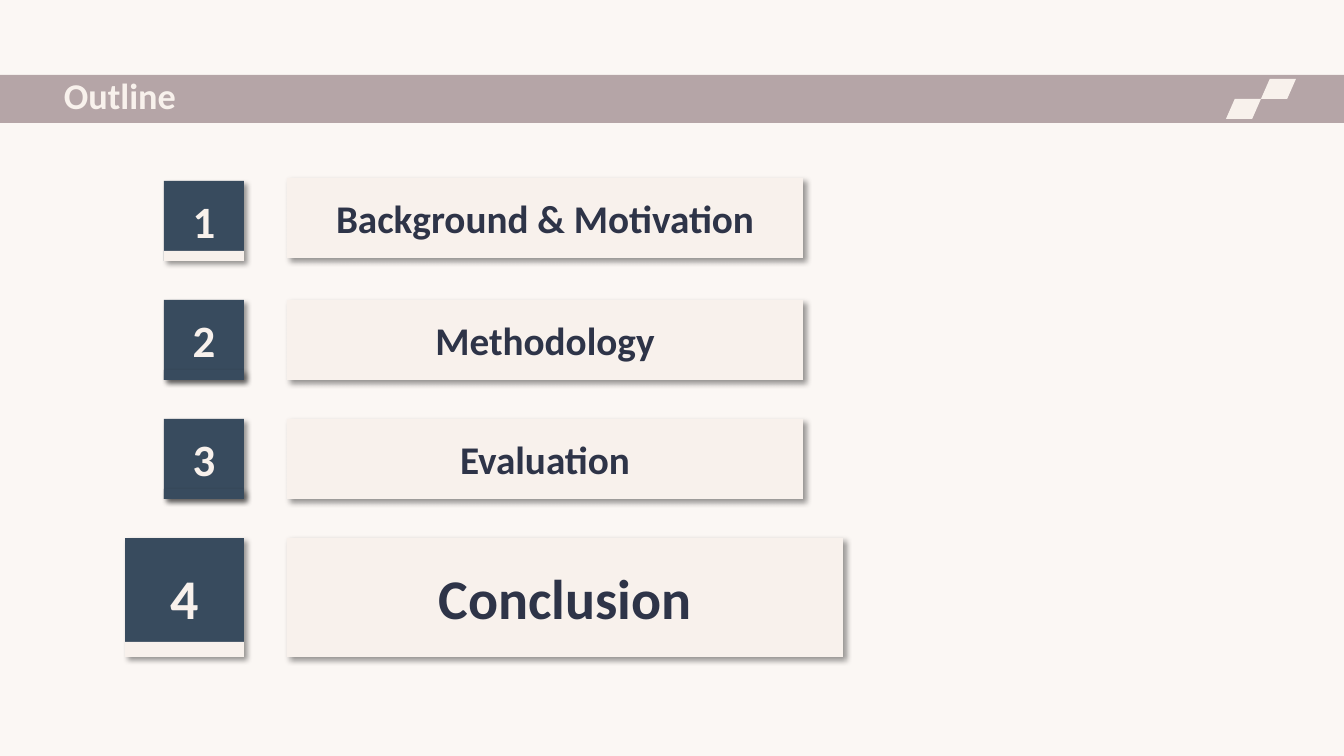
from dataclasses import dataclass

from lxml import etree
from pptx import Presentation
from pptx.dml.color import RGBColor
from pptx.enum.shapes import MSO_SHAPE
from pptx.enum.text import MSO_ANCHOR, PP_ALIGN
from pptx.oxml.ns import qn
from pptx.util import Emu, Pt

RECTANGLE = MSO_SHAPE.RECTANGLE
PARALLELOGRAM = MSO_SHAPE.PARALLELOGRAM
MIDDLE = MSO_ANCHOR.MIDDLE
LEFT = PP_ALIGN.LEFT
CENTER = PP_ALIGN.CENTER

PAGE_WIDTH, PAGE_HEIGHT = 1344, 756
EMU_PER_PX = 12192000 / PAGE_WIDTH


@dataclass(frozen=True)
class Theme:
    font: str = "Calibri"
    page: str = "F9F2ED"
    page_opacity: int = 57
    band: str = "73585E"
    band_opacity: int = 51
    cream: str = "F8F1EC"
    navy: str = "384B5E"
    ink: str = "2E3448"
    shadow: str = "000000"
    shadow_opacity: int = 40
    title_size: float = 25.9
    label_size: int = 28
    number_size: int = 32
    current_size: int = 40


THEME = Theme()

SECTIONS = [
    ("Background & Motivation", THEME.cream, False),
    ("Methodology", THEME.navy, False),
    ("Evaluation", THEME.navy, False),
    ("Conclusion", THEME.cream, True),
]


def px(length):
    return Emu(round(length * EMU_PER_PX))


def set_opacity(element, percent):
    for color in element.iter(qn("a:srgbClr")):
        etree.SubElement(color, qn("a:alpha"), val=str(percent * 1000))


def add_shadow(shape):
    effects = shape._element.spPr.find(qn("a:effectLst"))
    shadow = etree.SubElement(
        effects, qn("a:outerShdw"), blurRad=str(Pt(4)), dist=str(Pt(3)),
        dir="2700000", algn="tl", rotWithShape="0",
    )
    etree.SubElement(shadow, qn("a:srgbClr"), val=THEME.shadow)
    set_opacity(shadow, THEME.shadow_opacity)


def add_block(shapes, box, color, kind=RECTANGLE, shadow=False):
    block = shapes.add_shape(kind, *map(px, box))
    block.shadow.inherit = False
    block.fill.solid()
    block.fill.fore_color.rgb = RGBColor.from_string(color)
    block.line.fill.background()
    if shadow:
        add_shadow(block)
    return block


def write_text(shape, text, size, color, alignment=CENTER, line_spacing=None):
    frame = shape.text_frame
    frame.word_wrap = True
    frame.vertical_anchor = MIDDLE
    para = frame.paragraphs[0]
    para.alignment = alignment
    para.line_spacing = line_spacing
    span = para.add_run()
    span.text = text
    formats = {"name": THEME.font, "size": Pt(size), "bold": True}
    for name, value in formats.items():
        setattr(span.font, name, value)
    span.font.color.rgb = RGBColor.from_string(color)


def add_title_band(page, box):
    left, top, width, height = box
    band = add_block(page.shapes, box, THEME.band)
    set_opacity(band._element.spPr, THEME.band_opacity)

    tile_width, tile_height = 35, 20
    for column, row in ((1, 0), (0, 1)):
        tile_box = (
            left + width - 118 + column * tile_width,
            top + 4 + row * tile_height,
            tile_width,
            tile_height,
        )
        tile = add_block(page.shapes, tile_box, THEME.cream, PARALLELOGRAM)
        tile.adjustments[0] = 0.44

    title = page.shapes.add_textbox(*map(px, (left + 54, top, 1171, height)))
    write_text(title, "Outline", THEME.title_size, THEME.cream, LEFT, 0.8)


def add_badge(page, box, number, size, strip_color):
    left, top, width, height = box
    group = page.shapes.add_group_shape()
    tile = add_block(group.shapes, box, THEME.navy, shadow=True)
    write_text(tile, str(number), size, THEME.cream)
    strip_height = round(height / 8)
    strip_box = (left, top + height - strip_height, width, strip_height)
    add_block(group.shapes, strip_box, strip_color, shadow=strip_color == THEME.navy)


def add_outline(page, box):
    left, top, width, height = box
    pitch = (height - 119) // (len(SECTIONS) - 1)
    badge_right, label_left = left + 119, left + 162
    for index, (name, strip_color, current) in enumerate(SECTIONS):
        row_top = top + index * pitch
        side = 119 if current else 80
        number_size = THEME.current_size if current else THEME.number_size
        label_size = THEME.current_size if current else THEME.label_size
        label_right = left + width - (0 if current else 40)
        label_top = row_top - (3 if index == 0 else 0)

        badge_box = (badge_right - side, row_top, side, side)
        add_badge(page, badge_box, index + 1, number_size, strip_color)
        label_box = (label_left, label_top, label_right - label_left, side)
        label = add_block(page.shapes, label_box, THEME.cream, shadow=True)
        write_text(label, name, label_size, THEME.ink)


def main():
    deck = Presentation()
    deck.slide_width, deck.slide_height = px(PAGE_WIDTH), px(PAGE_HEIGHT)
    page = deck.slides.add_slide(deck.slide_layouts[6])
    page.background.fill.solid()
    page.background.fill.fore_color.rgb = RGBColor.from_string(THEME.page)
    set_opacity(page._element, THEME.page_opacity)
    add_title_band(page, (0, 75, PAGE_WIDTH, 48))
    add_outline(page, (125, 181, 718, 476))
    deck.save("out.pptx")


if __name__ == "__main__":
    main()
